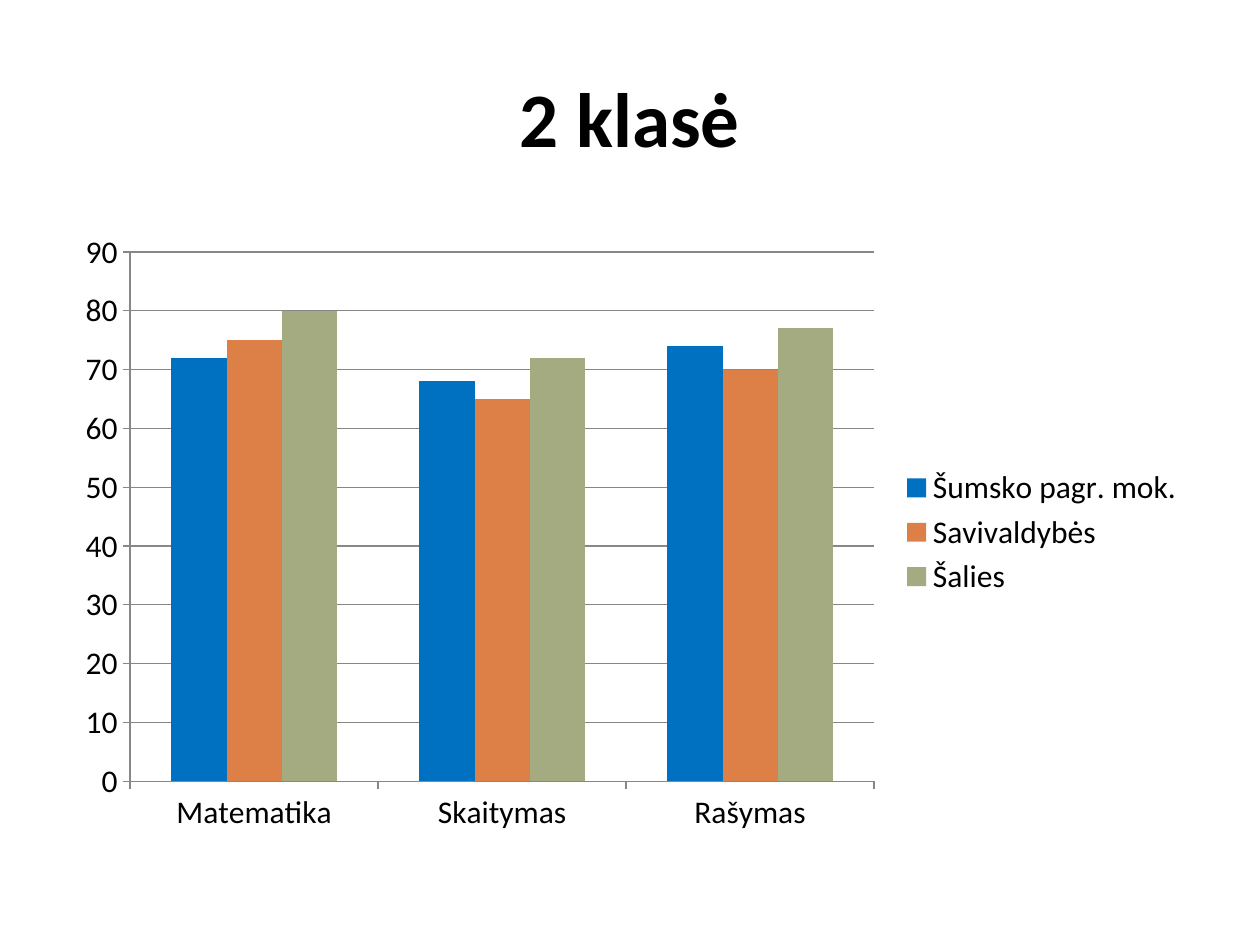
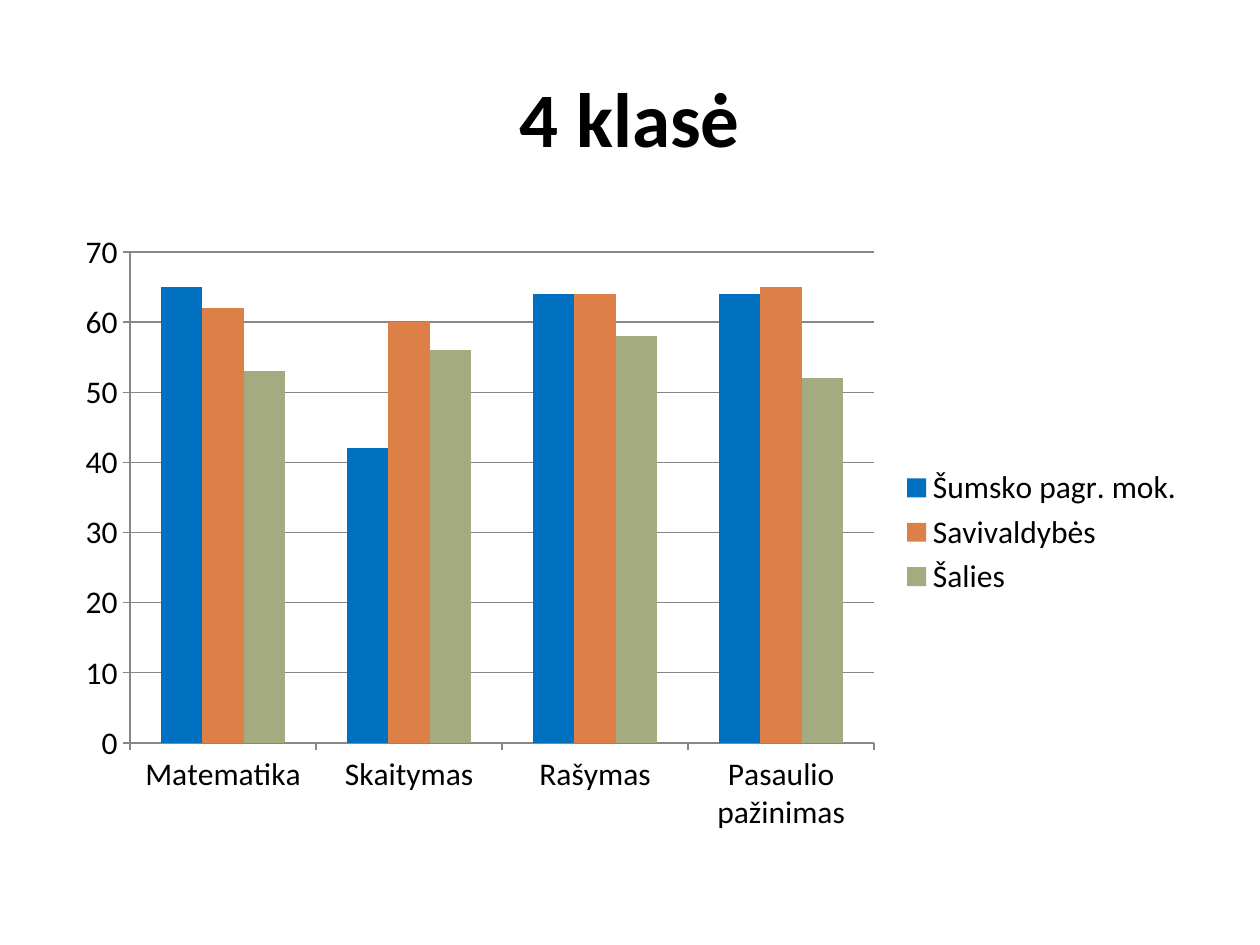
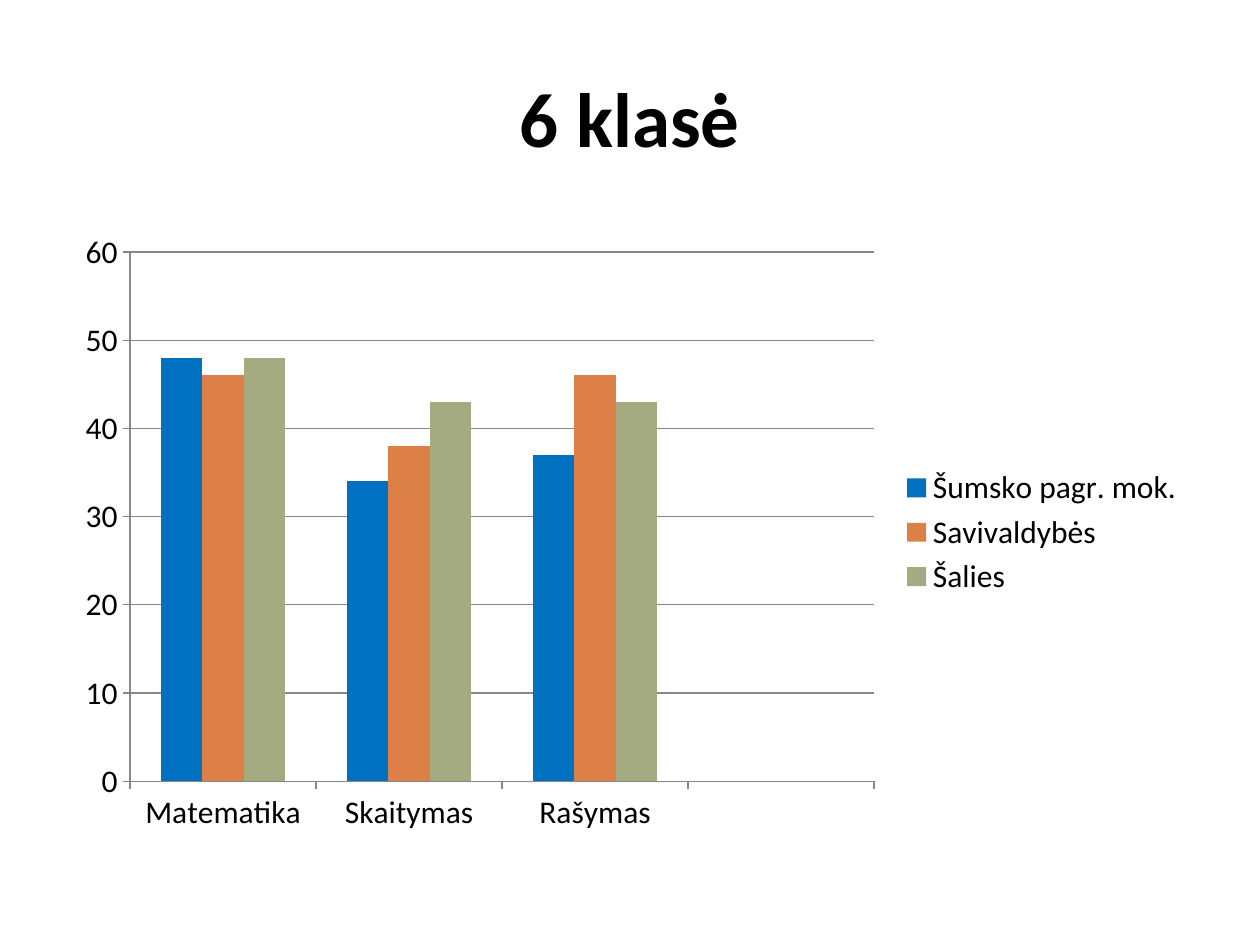
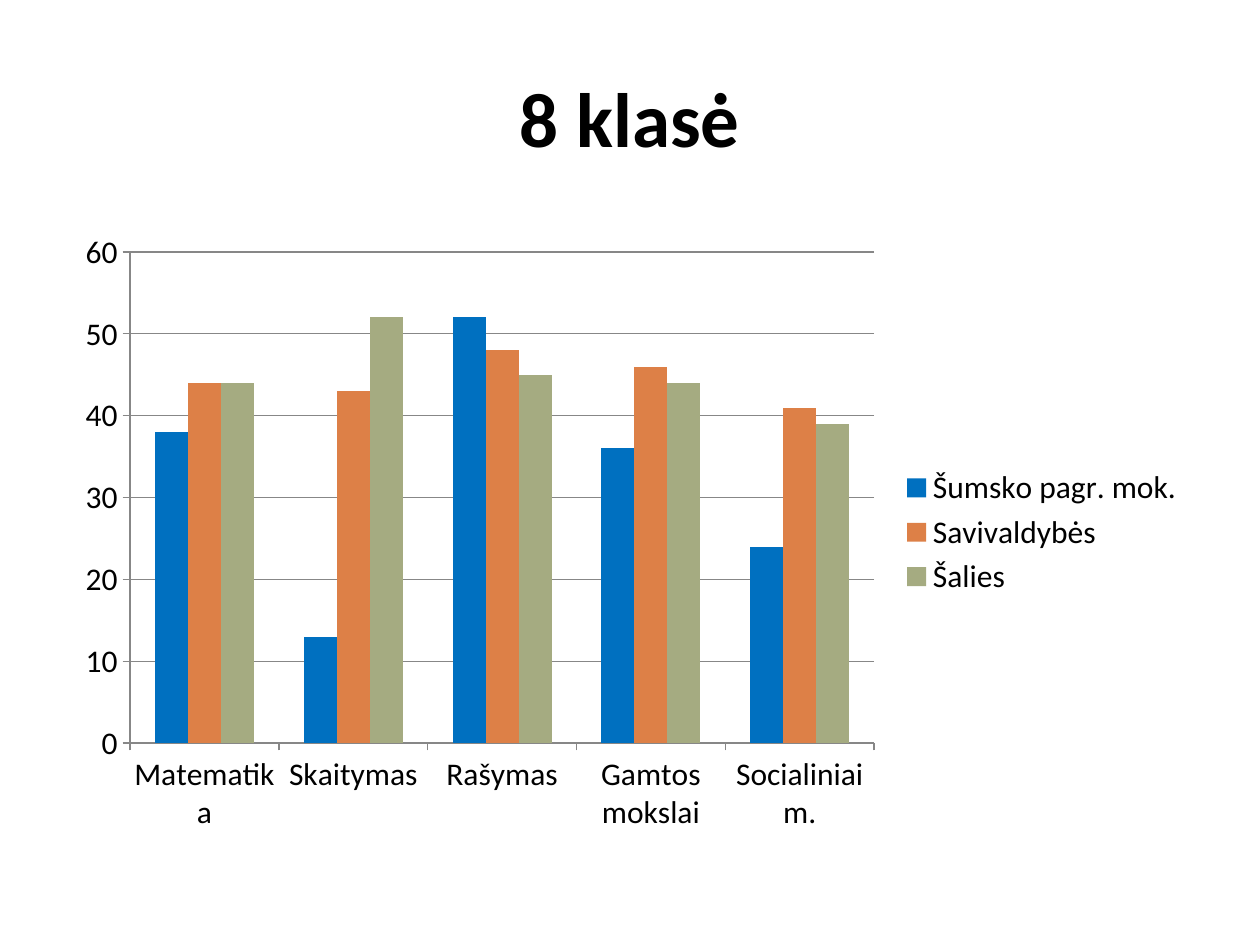
from dataclasses import dataclass

from pptx import Presentation
from pptx.chart.data import CategoryChartData
from pptx.dml.color import RGBColor
from pptx.enum.chart import XL_CHART_TYPE, XL_LEGEND_POSITION, XL_TICK_MARK
from pptx.enum.text import MSO_ANCHOR, PP_ALIGN
from pptx.util import Pt

COLUMNS = XL_CHART_TYPE.COLUMN_CLUSTERED
RIGHT = XL_LEGEND_POSITION.RIGHT
OUTSIDE = XL_TICK_MARK.OUTSIDE
MIDDLE = MSO_ANCHOR.MIDDLE
CENTER = PP_ALIGN.CENTER


@dataclass(frozen=True)
class Theme:
    font: str = "Calibri"
    title_size: Pt = Pt(44)
    chart_size: Pt = Pt(18)
    text: RGBColor = RGBColor(0x00, 0x00, 0x00)
    background: RGBColor = RGBColor(0xFF, 0xFF, 0xFF)
    axis: RGBColor = RGBColor(0x87, 0x87, 0x87)
    school: RGBColor = RGBColor(0x00, 0x70, 0xC0)
    municipality: RGBColor = RGBColor(0xDD, 0x80, 0x47)
    country: RGBColor = RGBColor(0xA5, 0xAB, 0x81)


theme = Theme()

groups = [
    ("Šumsko pagr. mok.", theme.school),
    ("Savivaldybės", theme.municipality),
    ("Šalies", theme.country),
]
core_subjects = ["Matematika", "Skaitymas", "Rašymas"]
grades = [
    ("2 klasė", core_subjects, 90,
     [[72, 68, 74], [75, 65, 70], [80, 72, 77]]),
    ("4 klasė", core_subjects + ["Pasaulio pažinimas"], 70,
     [[65, 42, 64, 64], [62, 60, 64, 65], [53, 56, 58, 52]]),
    ("6 klasė", core_subjects + [""], 60,
     [[48, 34, 37, None], [46, 38, 46, None], [48, 43, 43, None]]),
    ("8 klasė", core_subjects + ["Gamtos mokslai", "Socialiniai m."], 60,
     [[38, 13, 52, 36, 24], [44, 43, 48, 46, 41], [44, 52, 45, 44, 39]]),
]


def apply_format(target, values):
    for name, value in values.items():
        setattr(target, name, value)


def style_font(font, size, bold):
    apply_format(font, {"name": theme.font, "size": size, "bold": bold})
    font.color.rgb = theme.text


deck = Presentation()
apply_format(deck, {"slide_width": Pt(720), "slide_height": Pt(540)})
blank_layout = deck.slide_layouts[6]
left, width = Pt(36), Pt(648)

for grade, subjects, top_score, scores in grades:
    slide = deck.slides.add_slide(blank_layout)
    slide.background.fill.solid()
    slide.background.fill.fore_color.rgb = theme.background

    heading = slide.shapes.add_textbox(left, Pt(21.6), width, Pt(90)).text_frame
    apply_format(heading, {"word_wrap": True, "vertical_anchor": MIDDLE, "text": grade})
    heading.paragraphs[0].alignment = CENTER
    style_font(heading.paragraphs[0].runs[0].font, theme.title_size, True)

    results = CategoryChartData()
    results.categories = subjects
    for (group, _), group_scores in zip(groups, scores):
        results.add_series(group, group_scores)
    chart = slide.shapes.add_chart(
        COLUMNS, left, Pt(126), width, Pt(356.4), results).chart
    apply_format(chart, {"has_title": False, "has_legend": True})
    apply_format(chart.legend, {"position": RIGHT, "include_in_layout": False})
    style_font(chart.font, theme.chart_size, False)

    columns = chart.plots[0]
    apply_format(columns, {"gap_width": 150, "overlap": 0, "vary_by_categories": False})
    for series, (_, color) in zip(columns.series, groups):
        series.format.fill.solid()
        series.format.fill.fore_color.rgb = color

    subject_axis, score_axis = chart.category_axis, chart.value_axis
    apply_format(subject_axis, {"has_major_gridlines": False})
    apply_format(score_axis, {
        "has_major_gridlines": True,
        "minimum_scale": 0,
        "maximum_scale": top_score,
        "major_unit": 10,
    })
    for axis in (subject_axis, score_axis):
        axis.major_tick_mark = OUTSIDE
    for ruled in (subject_axis, score_axis, score_axis.major_gridlines):
        ruled.format.line.color.rgb = theme.axis
        ruled.format.line.width = Pt(0.75)

deck.save("out.pptx")
